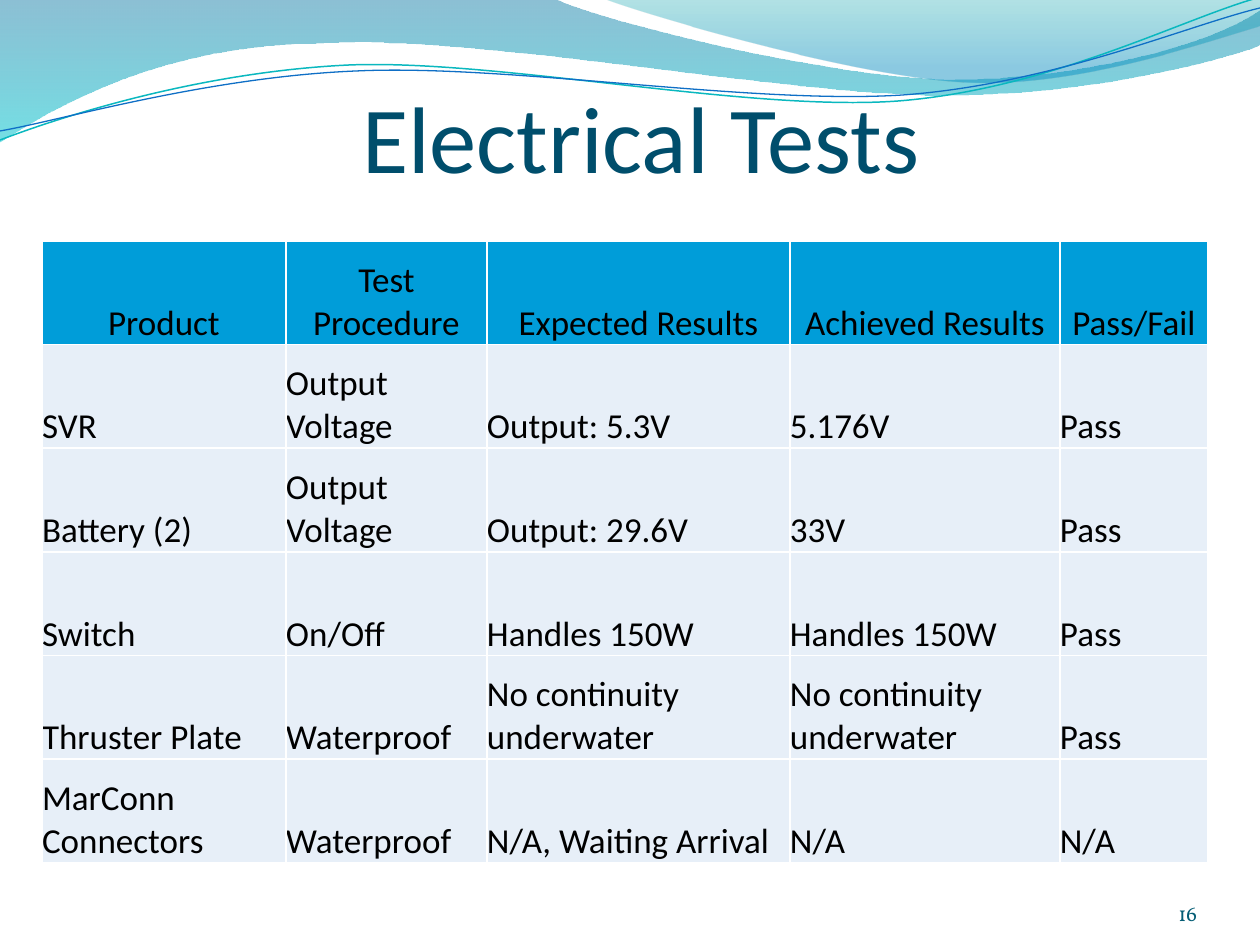
from pptx import Presentation
from pptx.dml.color import RGBColor
from pptx.enum.text import MSO_ANCHOR as Anchor, MSO_AUTO_SIZE as AutoSize, PP_ALIGN as Align
from pptx.oxml.ns import qn
from pptx.util import Pt
from lxml.etree import SubElement

SCALE = 914400 / 126

WHITE = RGBColor(0xFF, 0xFF, 0xFF)
BLACK = RGBColor(0x00, 0x00, 0x00)
TITLE_BLUE = RGBColor(0x00, 0x4E, 0x6C)
NUMBER_BLUE = RGBColor(0x04, 0x5D, 0x75)
HEADER_BLUE = RGBColor(0x00, 0x9D, 0xD9)
ROW_BLUE = RGBColor(0xE7, 0xEF, 0xF8)
DEEP_BLUE = RGBColor(0x00, 0x74, 0xA1)
CYAN = RGBColor(0x00, 0xC6, 0xCF)
TEAL = RGBColor(0x00, 0xA1, 0xA9)
SKY_BLUE = RGBColor(0x00, 0x8B, 0xBF)
LINE_TEAL = RGBColor(0x0A, 0xB8, 0xBF)
LINE_BLUE = RGBColor(0x0F, 0x6F, 0xC6)

WIDE_WAVE = [(0, -1), (555, -1), (600, 21, 837, 79, 955, 79), (1075, 79, 1207, 47, 1260, 11),
             (1261, 45), (1239, 55, 1096, 96, 940, 95), (784, 95, 481, 35, 324, 43),
             (163, 44, 58, 105, -1, 142)]
RIGHT_WAVE = [(604, -1), (641, 14, 859, 78, 969, 82), (1079, 87, 1211, 40, 1260, 26), (1260, 0)]
TEAL_LINE = [(0, 140), (60, 117, 199, 72, 349, 65), (498, 59, 747, 112, 898, 101),
             (1050, 89, 1182, 19, 1257, -2)]
BLUE_LINE = [(0, 131), (59, 121, 207, 77, 357, 71), (508, 64, 752, 105, 903, 95),
             (1053, 84, 1186, 26, 1260, 8)]

COLUMN_WIDTHS = [244, 201, 303, 270, 148]
TEST_ROWS = [
    ["Product", "Test Procedure", "Expected Results", "Achieved Results", "Pass/Fail"],
    ["SVR", "Output Voltage", "Output: 5.3V", "5.176V", "Pass"],
    ["Battery (2)", "Output Voltage", "Output: 29.6V", "33V", "Pass"],
    ["Switch", "On/Off", "Handles 150W", "Handles 150W", "Pass"],
    ["Thruster Plate", "Waterproof", "No continuity underwater", "No continuity underwater", "Pass"],
    ["MarConn Connectors", "Waterproof", "N/A, Waiting Arrival", "N/A", "N/A"],
]


def px(length):
    """Turn pixels into EMU."""
    return round(length * SCALE)


def write_text(frame, text, size, color, font="Calibri", align=Align.LEFT):
    """Write one formatted paragraph into a text frame."""
    paragraph = frame.paragraphs[0]
    paragraph.alignment = align
    run = paragraph.add_run()
    run.text = text
    run.font.size = Pt(size)
    run.font.name = font
    run.font.bold = False
    run.font.color.rgb = color


def add_outline(slide, left, top, segments, closed):
    """Add a freeform of lines and cubic curves measured from left and top."""
    anchors = [(px(left + segment[-2]), px(top + segment[-1])) for segment in segments]
    builder = slide.shapes.build_freeform(*anchors[0], scale=1.0)
    builder.add_line_segments(anchors[1:], close=closed)
    shape = builder.convert_to_shape()
    shape.shadow.inherit = False
    lines = list(shape._element.spPr.iter(qn("a:lnTo")))
    for line, segment in zip(lines, segments[1:]):
        if len(segment) == 6:
            line.tag = qn("a:cubicBezTo")
            line.clear()
            for x, y in zip(segment[::2], segment[1::2]):
                SubElement(line, qn("a:pt"), x=str(px(left + x) - shape.left),
                           y=str(px(top + y) - shape.top))
    return shape


def add_wave(slide, left, top, segments, stops):
    """Add a wave with a translucent gradient running downwards."""
    shape = add_outline(slide, left, top, segments, True)
    shape.line.fill.background()
    shape.fill.gradient()
    shape.fill.gradient_angle = 270
    for stop, (position, color, _) in zip(shape.fill.gradient_stops, stops):
        stop.position = position
        stop.color.rgb = color
    colors = shape._element.spPr.iter(qn("a:srgbClr"))
    for color_element, (_, _, opacity) in zip(list(colors), stops):
        SubElement(color_element, qn("a:alpha"), val=str(opacity * 1000))


def add_wave_line(slide, left, top, segments, color, width):
    """Add an unfilled curved line."""
    shape = add_outline(slide, left, top, segments, False)
    shape.fill.background()
    shape.line.color.rgb = color
    shape.line.width = Pt(width)


def add_wave_header(slide, left, top):
    """Draw the waves and lines across the top of the slide."""
    add_wave(slide, left, top, WIDE_WAVE, [(0, DEEP_BLUE, 45), (1, CYAN, 55)])
    add_wave(slide, left, top, RIGHT_WAVE, [(0, TEAL, 30), (0.8, SKY_BLUE, 45)])
    add_wave_line(slide, left, top, TEAL_LINE, LINE_TEAL, 0.85)
    add_wave_line(slide, left, top, BLUE_LINE, LINE_BLUE, 0.75)


def add_title(slide, left, top, width, height):
    """Add the centred slide title."""
    frame = slide.shapes.add_textbox(px(left), px(top), px(width), px(height)).text_frame
    frame.word_wrap = False
    frame.auto_size = AutoSize.SHAPE_TO_FIT_TEXT
    write_text(frame, "Electrical Tests", size=54, color=TITLE_BLUE, align=Align.CENTER)


def clear_margins(box):
    """Remove the inner margins of a cell or text frame and anchor it at the bottom."""
    box.margin_left = box.margin_right = box.margin_top = box.margin_bottom = 0
    box.vertical_anchor = Anchor.BOTTOM


def add_slide_number(slide, left, top, width, height):
    """Add the page number at the bottom right."""
    frame = slide.shapes.add_textbox(px(left), px(top), px(width), px(height)).text_frame
    frame.word_wrap = True
    clear_margins(frame)
    write_text(frame, "16", size=12, color=NUMBER_BLUE, font="Vollkorn", align=Align.RIGHT)


def format_cell(cell, fill_color):
    """Give a cell its fill and thin white borders."""
    properties = cell._tc.get_or_add_tcPr()
    for side in ("a:lnL", "a:lnR", "a:lnT", "a:lnB"):
        border = SubElement(properties, qn(side), w=str(Pt(1)))
        solid = SubElement(border, qn("a:solidFill"))
        SubElement(solid, qn("a:srgbClr"), val=str(WHITE))
    cell.fill.solid()
    cell.fill.fore_color.rgb = fill_color
    clear_margins(cell)


def add_test_table(slide, left, top, width, height):
    """Add the table of test results with rows of equal height."""
    table = slide.shapes.add_table(len(TEST_ROWS), len(COLUMN_WIDTHS), px(left), px(top),
                                   px(width), px(height)).table
    table.first_row = table.horz_banding = False
    for column, column_width in zip(table.columns, COLUMN_WIDTHS):
        column.width = px(column_width)
    for row_index, texts in enumerate(TEST_ROWS):
        is_header = row_index == 0
        for column_index, text in enumerate(texts):
            cell = table.cell(row_index, column_index)
            format_cell(cell, HEADER_BLUE if is_header else ROW_BLUE)
            write_text(cell.text_frame, text, size=20, color=BLACK,
                       align=Align.CENTER if is_header else Align.LEFT)


def main():
    """Build the slide and save it."""
    presentation = Presentation()
    presentation.slide_width = px(1260)
    presentation.slide_height = px(945)
    slide = presentation.slides.add_slide(presentation.slide_layouts[6])
    add_wave_header(slide, 0, 0)
    add_slide_number(slide, 1092, 876, 105, 50)
    add_test_table(slide, 42, 241, sum(COLUMN_WIDTHS), 622)
    add_title(slide, 346, 73, 590, 127)
    presentation.save("out.pptx")


if __name__ == "__main__":
    main()
